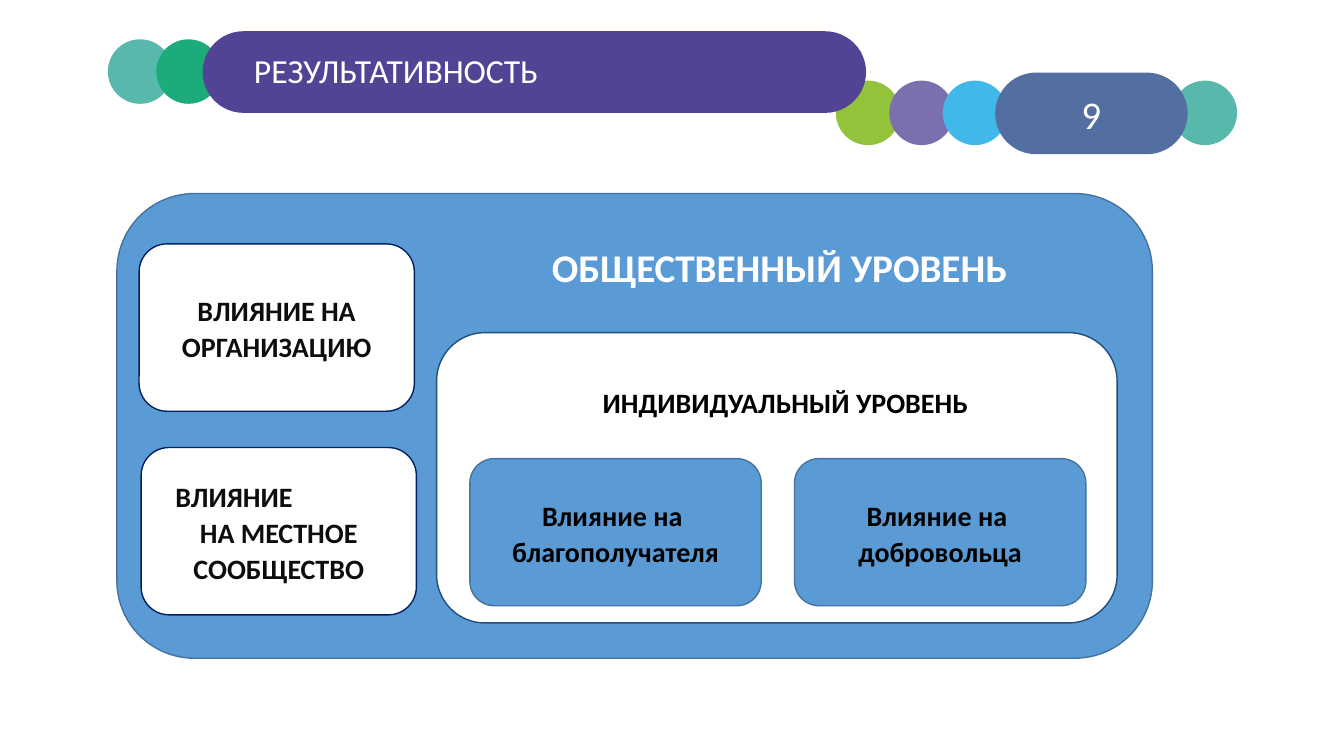
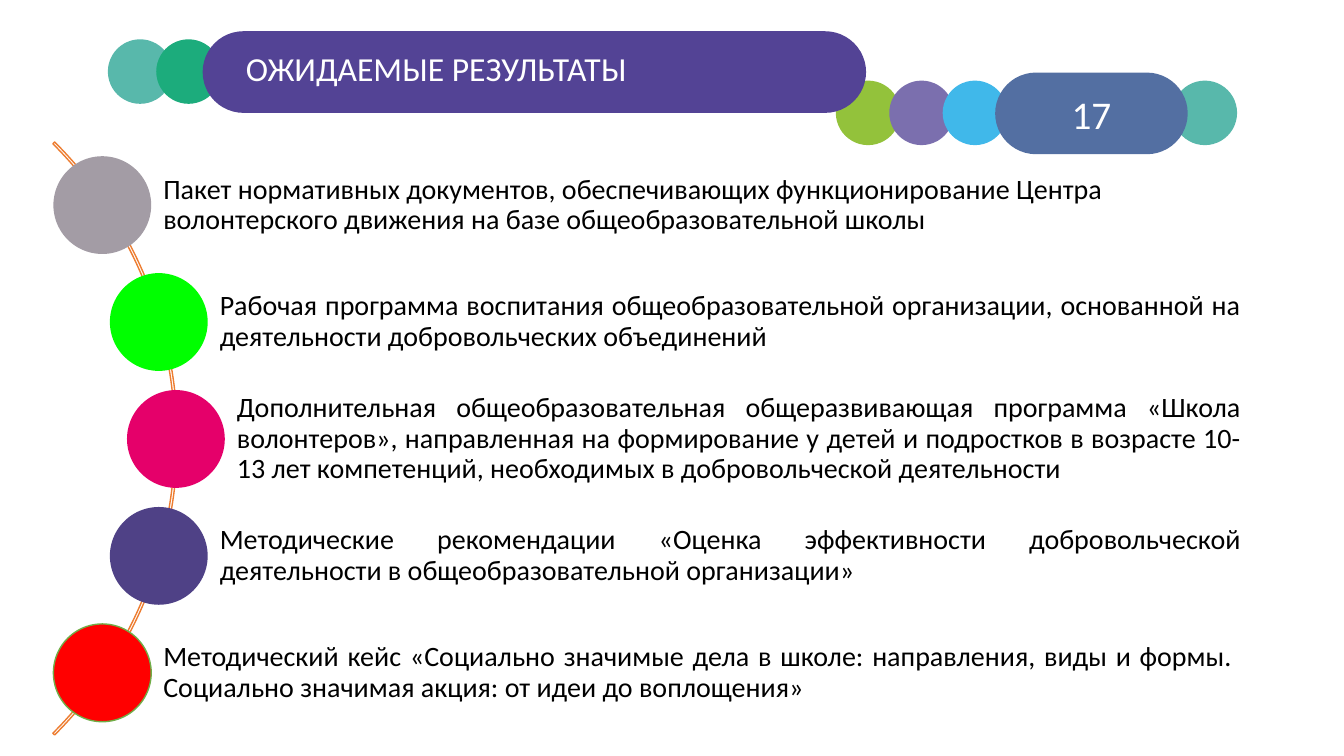
from pptx import Presentation
from pptx.dml.color import RGBColor
from pptx.enum.shapes import MSO_SHAPE
from pptx.enum.text import MSO_ANCHOR, PP_ALIGN
from pptx.util import Emu, Pt

ELLIPSE, ROUNDED, ARC = MSO_SHAPE.OVAL, MSO_SHAPE.ROUNDED_RECTANGLE, MSO_SHAPE.BLOCK_ARC
LEFT, CENTER, JUSTIFY = PP_ALIGN.LEFT, PP_ALIGN.CENTER, PP_ALIGN.JUSTIFY
TOP, MIDDLE = MSO_ANCHOR.TOP, MSO_ANCHOR.MIDDLE

EMU_PER_PX = 9144
FONT = "Calibri"
WHITE, BLACK, INK = "FFFFFF", "000000", "0D0D0D"
TEAL, GREEN, LIME, LILAC, SKY = "58B8AB", "1CAC7C", "93C23B", "7B6FAE", "40B8EA"
TITLE_FILL, NUMBER_FILL = "534395", "536FA2"
BLUE, BLUE_LINE, DEEP_LINE, NAVY_LINE = "5B9BD5", "43739E", "1F4E79", "002060"
ORANGE = "ED7D31"

HEADER_DOTS = [
    (1163, 80, TEAL),
    (107, 39, TEAL),
    (155, 39, GREEN),
    *((829 + 53 * step, 80, fill) for step, fill in enumerate((LIME, LILAC, SKY))),
]
HEADER_DOT_SIZE = 64

BALL_SIZE, BALL_TOP, BALL_PITCH = 97, 155, 116
RESULT_RIGHT, RESULT_HEIGHT = 1237, 77
RESULTS = [
    (53, "A39CA5", None, LEFT,
     "Пакет нормативных документов, обеспечивающих функционирование Центра "
     "волонтерского движения на базе общеобразовательной школы"),
    (109, "00FF00", None, JUSTIFY,
     "Рабочая программа воспитания общеобразовательной организации, основанной на "
     "деятельности добровольческих объединений"),
    (126, "E5006A", None, JUSTIFY,
     "Дополнительная общеобразовательная общеразвивающая программа «Школа волонтеров», "
     "направленная на формирование у детей и подростков в возрасте 10-13 лет "
     "компетенций, необходимых в добровольческой деятельности"),
    (109, "4F4186", None, JUSTIFY,
     "Методические рекомендации «Оценка эффективности добровольческой деятельности "
     "в общеобразовательной организации»"),
    (53, "FF0000", "70AD47", JUSTIFY,
     "Методический кейс «Социально значимые дела в школе: направления, виды и формы.  "
     "Социально значимая акция: от идеи до воплощения»"),
]


def px(length):
    return Emu(length * EMU_PER_PX)


def color(value):
    return RGBColor.from_string(value)


def apply_format(target, values):
    for name, value in values.items():
        setattr(target, name, value)


def add_figure(page, kind, bounds, fill=None, line=None, adjustments=()):
    figure = page.shapes.add_shape(kind, *map(px, bounds))
    figure.shadow.inherit = False
    if fill:
        figure.fill.solid()
        figure.fill.fore_color.rgb = color(fill)
    else:
        figure.fill.background()
    if line:
        figure.line.color.rgb = color(line)
        figure.line.width = Pt(1)
    else:
        figure.line.fill.background()
    for index, value in enumerate(adjustments):
        figure.adjustments[index] = value
    return figure


def write(box, lines, size, ink, bold=False, align=CENTER, spacing=1.0,
          anchor=MIDDLE, margins=(10, 5, 10, 5)):
    frame = box.text_frame
    sides = ("margin_left", "margin_top", "margin_right", "margin_bottom")
    apply_format(frame, {"word_wrap": True, "vertical_anchor": anchor,
                         **dict(zip(sides, map(px, margins)))})
    for index, line in enumerate(lines):
        para = frame.paragraphs[0] if index == 0 else frame.add_paragraph()
        apply_format(para, {"alignment": align, "line_spacing": spacing})
        span = para.add_run()
        span.text = line
        apply_format(span.font, {"name": FONT, "size": Pt(size), "bold": bold})
        span.font.color.rgb = color(ink)
    return frame


def add_label(page, bounds, text, size, ink, **style):
    box = page.shapes.add_textbox(*map(px, bounds))
    write(box, [text], size, ink, **style)


def add_card(page, bounds, lines, fill, line, ink):
    card = add_figure(page, ROUNDED, bounds, fill, line)
    return write(card, lines, 20, ink, bold=True, spacing=1.07)


def add_page(deck, number, title, title_left, title_top):
    page = deck.slides.add_slide(deck.slide_layouts[6])
    for left, top, fill in HEADER_DOTS:
        add_figure(page, ELLIPSE, (left, top, HEADER_DOT_SIZE, HEADER_DOT_SIZE), fill)
    badge = add_figure(page, ROUNDED, (987, 72, 191, 81), NUMBER_FILL, adjustments=[0.5])
    write(badge, [number], 28, WHITE)
    add_figure(page, ROUNDED, (201, 31, 658, 81), TITLE_FILL, adjustments=[0.5])
    add_label(page, (title_left, title_top, 498, 50), title, 24, WHITE,
              align=LEFT, anchor=TOP)
    return page


def build_levels(deck):
    page = add_page(deck, "9", "РЕЗУЛЬТАТИВНОСТЬ", 242, 45)
    add_figure(page, ROUNDED, (116, 192, 1027, 461), BLUE, BLUE_LINE)
    add_figure(page, ROUNDED, (433, 330, 675, 288), WHITE, DEEP_LINE)
    for left, target in ((466, "благополучателя"), (788, "добровольца")):
        add_card(page, (left, 455, 289, 146), ["Влияние на ", target],
                 BLUE, BLUE_LINE, BLACK)
    heading = {"bold": True, "spacing": 1.07, "anchor": TOP}
    add_label(page, (451, 375, 656, 45), "ИНДИВИДУАЛЬНЫЙ УРОВЕНЬ", 20, BLACK, **heading)
    add_label(page, (441, 233, 664, 58), "ОБЩЕСТВЕННЫЙ УРОВЕНЬ", 28, WHITE, **heading)
    add_card(page, (138, 242, 273, 166), ["ВЛИЯНИЕ НА ОРГАНИЗАЦИЮ"], WHITE, NAVY_LINE, INK)
    community = add_card(page, (140, 444, 273, 166), ["ВЛИЯНИЕ", "НА МЕСТНОЕ СООБЩЕСТВО"],
                         WHITE, NAVY_LINE, INK)
    first = community.paragraphs[0]
    first.alignment = LEFT
    first._p.get_or_add_pPr().set("marL", str(px(16)))


def build_results(deck):
    page = add_page(deck, "17", "ОЖИДАЕМЫЕ РЕЗУЛЬТАТЫ", 234, 43)
    add_figure(page, ARC, (-656, 19, 832, 832), line=ORANGE, adjustments=[189, 27, 0.003])
    for row, (left, fill, line, align, text) in enumerate(RESULTS):
        top = BALL_TOP + BALL_PITCH * row
        text_left = left + BALL_SIZE // 2
        text_top = top + (BALL_SIZE - RESULT_HEIGHT) // 2
        add_label(page, (text_left, text_top, RESULT_RIGHT - text_left, RESULT_HEIGHT),
                  text, 20, BLACK, align=align, spacing=0.9, margins=(61, 6, 6, 6))
        add_figure(page, ELLIPSE, (left, top, BALL_SIZE, BALL_SIZE), fill, line)


def main():
    deck = Presentation()
    apply_format(deck, {"slide_width": px(1333), "slide_height": px(750)})
    build_levels(deck)
    build_results(deck)
    deck.save("out.pptx")


if __name__ == "__main__":
    main()
